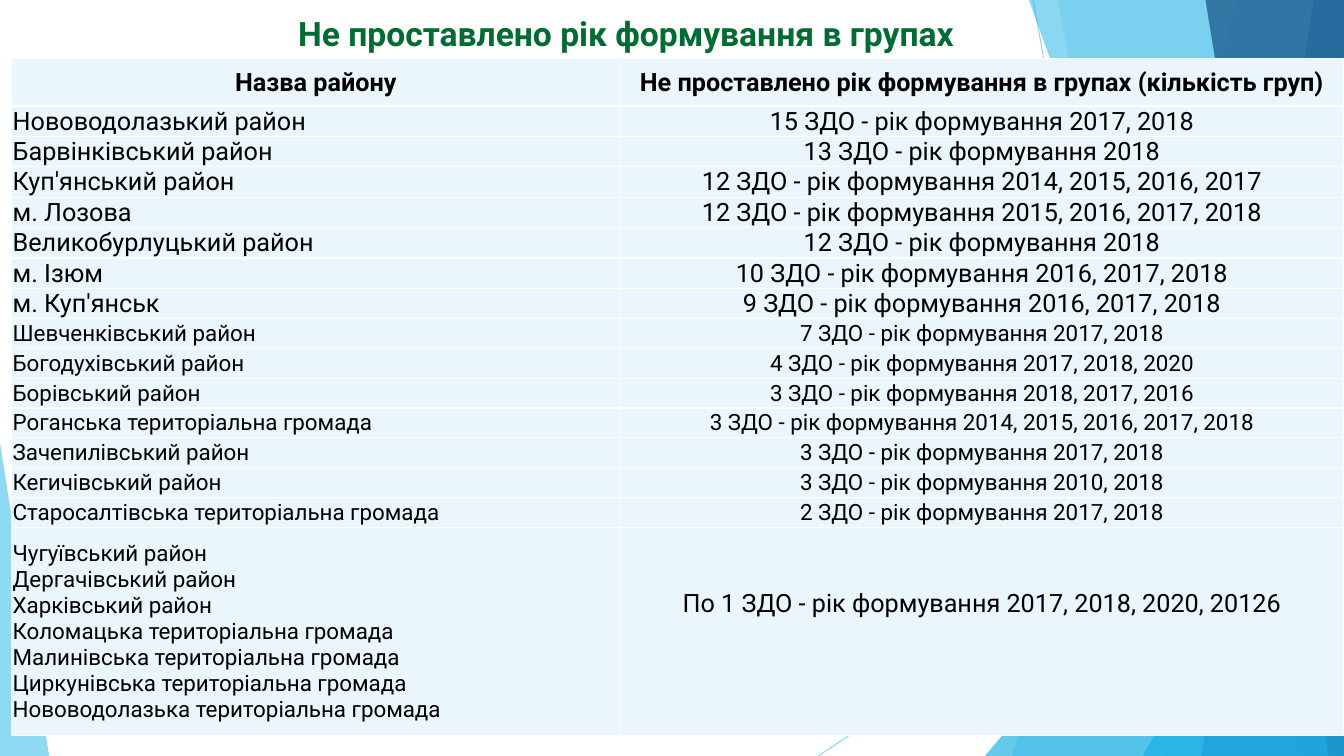
from lxml import etree
from pptx import Presentation
from pptx import util as u
from pptx.dml.color import RGBColor
from pptx.enum import shapes, text
from pptx.oxml import ns

COLORS = {
    "sky": "5FCBEF", "cyan": "17B0E4", "blue": "2E83C3", "navy": "226292",
    "title": "006C31", "cell": "EAF6FC", "border": "FFFFFF", "ink": "000000",
}
FONT = "Roboto"
WIDTH, HEIGHT = 33.87, 19.05


def set_color(fill, name, opacity=100):
    """Make the fill solid, with opacity in percent."""
    fill.solid()
    fill.fore_color.rgb = RGBColor.from_string(COLORS[name])
    if opacity < 100:
        color = fill._xPr.find(".//" + ns.qn("a:srgbClr"))
        etree.SubElement(color, ns.qn("a:alpha"), val=str(opacity * 1000))


def style_text(para, size, bold, color):
    for span in para.runs:
        span.font.name = FONT
        span.font.size = u.Pt(size)
        span.font.bold = bold
        span.font.color.rgb = RGBColor.from_string(COLORS[color])


deck = Presentation()
deck.slide_width, deck.slide_height = u.Cm(WIDTH), u.Cm(HEIGHT)
page = deck.slides.add_slide(deck.slide_layouts[5])

# Background lines: start x, start y, end x, end y
for ends in [(26.04, 0, 29.41, HEIGHT), (WIDTH, 10.24, 20.62, HEIGHT)]:
    line = page.shapes.add_connector(shapes.MSO_CONNECTOR.STRAIGHT, *map(u.Cm, ends))
    line.line.width = u.Pt(0.75)
    set_color(line.line.fill, "sky", 70)
    etree.SubElement(line._element.spPr, ns.qn("a:effectLst"))

# Panels reach the right edge: (top x, bottom x).
# Triangles stand on the bottom edge: (left, top, width, apex).
facets = [
    ("panel", (31.19, 25.5), "sky", 36),
    ("panel", (26.67, 30.05), "sky", 20),
    ("triangle", (24.82, 8.46, 9.05, 1), "cyan", 66),
    ("panel", (25.93, 32.79), "cyan", 50),
    ("panel", (33.1, 30.28), "blue", 70),
    ("panel", (30.38, 33.48), "navy", 80),
    ("triangle", (28.8, 9.98, 5.07, 1), "cyan", 66),
    ("triangle", (0, 11.15, 1.24, 0), "sky", 70),
]
for kind, place, color, opacity in facets:
    if kind == "panel":
        top_x, bottom_x = place
        outline = page.shapes.build_freeform(u.Cm(top_x), 0)
        corners = [(WIDTH, 0), (WIDTH, HEIGHT), (bottom_x, HEIGHT)]
        outline.add_line_segments([(u.Cm(x), u.Cm(y)) for x, y in corners])
        facet = outline.convert_to_shape()
    else:
        left, top, width, apex = place
        facet = page.shapes.add_shape(
            shapes.MSO_SHAPE.ISOSCELES_TRIANGLE,
            u.Cm(left), u.Cm(top), u.Cm(width), u.Cm(HEIGHT - top))
        facet.adjustments[0] = apex
    set_color(facet.fill, color, opacity)
    facet.line.fill.background()
    facet.shadow.inherit = False

title = page.shapes.title
title.left, title.top, title.width, title.height = map(u.Cm, (7.26, 0.2, 19.63, 1.27))
title.text_frame.text = "Не проставлено рік формування в групах"
title.text_frame.vertical_anchor = text.MSO_ANCHOR.TOP
title.text_frame.paragraphs[0].alignment = text.PP_ALIGN.LEFT
style_text(title.text_frame.paragraphs[0], 24, True, "title")

# District, number of kindergartens, years
districts = [
    ("Нововодолазький район", 15, "2017, 2018"),
    ("Барвінківський район", 13, "2018"),
    ("Куп'янський район", 12, "2014, 2015, 2016, 2017"),
    ("м. Лозова", 12, "2015, 2016, 2017, 2018"),
    ("Великобурлуцький район", 12, "2018"),
    ("м. Ізюм", 10, "2016, 2017, 2018"),
    ("м. Куп'янськ", 9, "2016, 2017, 2018"),
    ("Шевченківський район", 7, "2017, 2018"),
    ("Богодухівський район", 4, "2017, 2018, 2020"),
    ("Борівський район", 3, "2018, 2017, 2016"),
    ("Роганська територіальна громада", 3, "2014, 2015, 2016, 2017, 2018"),
    ("Зачепилівський район", 3, "2017, 2018"),
    ("Кегичівський район", 3, "2010, 2018"),
    ("Старосалтівська територіальна громада", 2, "2017, 2018"),
]
single_districts = [
    "Чугуївський район",
    "Дергачівський район",
    "Харківський район",
    "Коломацька територіальна громада",
    "Малинівська територіальна громада",
    "Циркунівська територіальна громада",
    "Нововодолазька територіальна громада",
]
rows = [("Назва району", "Не проставлено рік формування в групах (кількість груп)")]
rows += [(name, f"{count} ЗДО - рік формування {years}") for name, count, years in districts]
rows.append(("\n".join(single_districts), "По 1 ЗДО - рік формування 2017, 2018, 2020, 20126"))
last = len(rows) - 1
heights = [1.2] + [0.75] * len(districts) + [5.26]
column_widths = [15.32, 18.25]

table = page.shapes.add_table(
    len(rows), 2, u.Cm(0.3), u.Cm(1.47),
    u.Cm(sum(column_widths)), u.Cm(sum(heights))).table
table.horz_banding = False
for column, width in zip(table.columns, column_widths):
    column.width = u.Cm(width)

for row_index, values in enumerate(rows):
    table.rows[row_index].height = u.Cm(heights[row_index])
    for column_index, value in enumerate(values):
        cell = table.cell(row_index, column_index)
        cell.text_frame.text = value
        cell.vertical_anchor = text.MSO_ANCHOR.MIDDLE
        cell.margin_left = cell.margin_right = cell.margin_top = u.Cm(0.02)
        # The closing remark sits a little above the middle of its cell
        closing = row_index == last and column_index == 1
        cell.margin_bottom = u.Cm(1.4 if closing else 0)
        centred = row_index == 0 or column_index == 1
        size = 18 if row_index < 8 or closing else 16
        for para in cell.text_frame.paragraphs:
            para.alignment = text.PP_ALIGN.CENTER if centred else text.PP_ALIGN.LEFT
            style_text(para, size, row_index == 0, "ink")
        properties = cell._tc.get_or_add_tcPr()
        for side in "LRTB":
            border = etree.SubElement(properties, ns.qn(f"a:ln{side}"), w=str(u.Pt(1)))
            solid = etree.SubElement(border, ns.qn("a:solidFill"))
            etree.SubElement(solid, ns.qn("a:srgbClr"), val=COLORS["border"])
        set_color(cell.fill, "cell")

deck.save("out.pptx")
